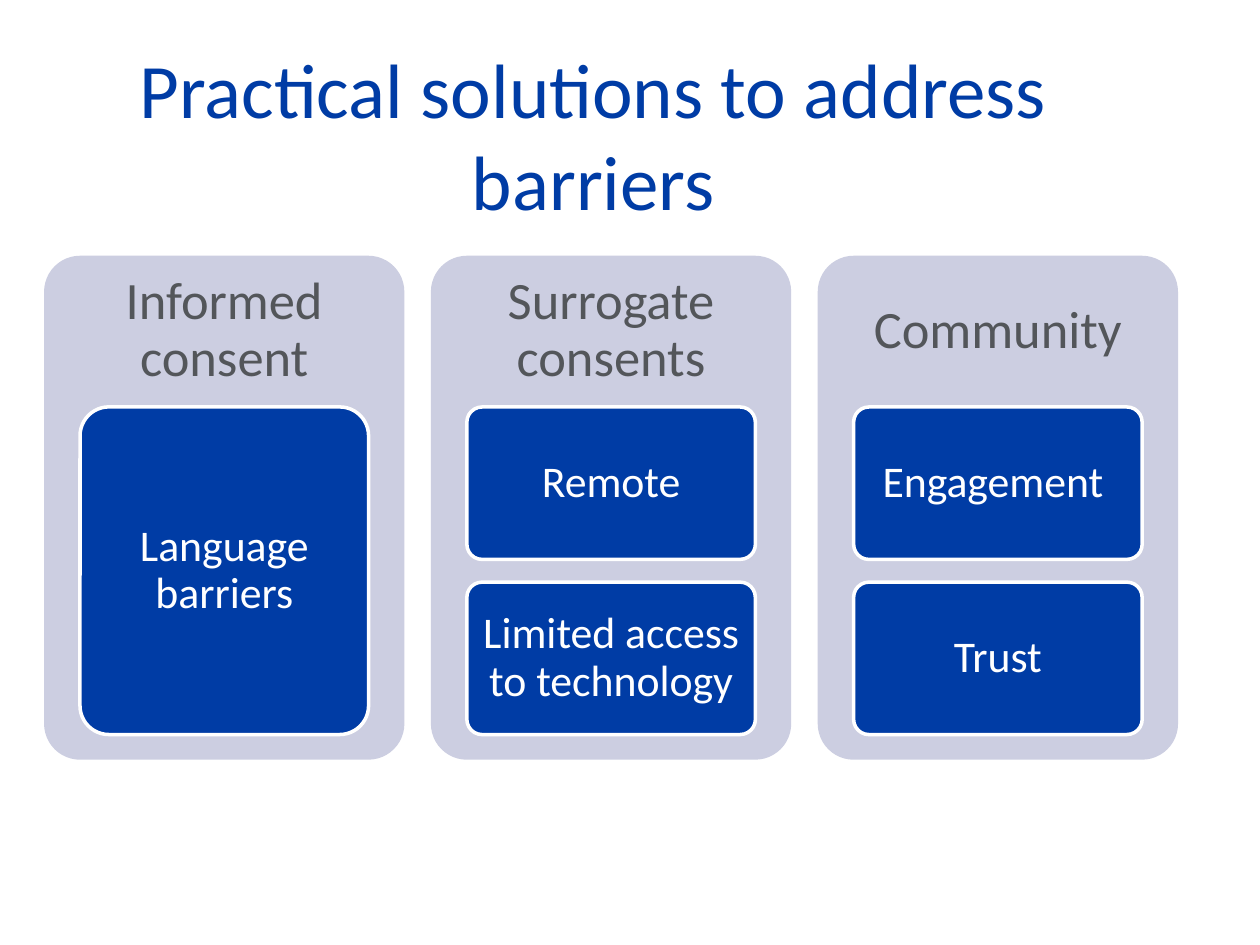
from pptx import Presentation
from pptx.dml.color import RGBColor
from pptx.enum.shapes import MSO_SHAPE
from pptx.enum.text import MSO_ANCHOR, PP_ALIGN
from pptx.util import Inches, Pt

TITLE = "Practical solutions to address barriers"
COLUMNS = [
    ("Informed consent", ["Language barriers"]),
    ("Surrogate consents", ["Remote", "Limited access to technology"]),
    ("Community", ["Engagement ", "Trust"]),
]
COLORS = {"blue": "003CA5", "panel": "CCCEE1", "gray": "53565A", "white": "FFFFFF"}

PANEL_LEFT, PANEL_TOP, PANEL_WIDTH, PANEL_HEIGHT = 0.35, 2.03, 2.86, 4
PANEL_STEP = 3.07
HEADING_HEIGHT = 1.2
CARD_WIDTH, CARDS_HEIGHT, CARD_GAP = 2.29, 2.6, 0.18


def color(name):
    return RGBColor.from_string(COLORS[name])


def write(shape, text, size, color_name, margins, anchor=MSO_ANCHOR.MIDDLE, spacing=0.9):
    frame = shape.text_frame
    horizontal, vertical = (Inches(margin) for margin in margins)
    frame_format = {
        "word_wrap": True, "vertical_anchor": anchor,
        "margin_left": horizontal, "margin_right": horizontal,
        "margin_top": vertical, "margin_bottom": vertical,
    }
    for name, value in frame_format.items():
        setattr(frame, name, value)
    paragraph = frame.paragraphs[0]
    paragraph.text = text
    paragraph.alignment = PP_ALIGN.CENTER
    paragraph.line_spacing = spacing
    for name, value in {"name": "Calibri", "size": Pt(size)}.items():
        setattr(paragraph.font, name, value)
    paragraph.font.color.rgb = color(color_name)


def add_text(slide, box, *args, **options):
    write(slide.shapes.add_textbox(*map(Inches, box)), *args, **options)


def add_rounded(slide, box, fill, line=None):
    shape = slide.shapes.add_shape(MSO_SHAPE.ROUNDED_RECTANGLE, *map(Inches, box))
    shape.adjustments[0] = 0.1
    shape.shadow.inherit = False
    shape.fill.solid()
    shape.fill.fore_color.rgb = color(fill)
    if line:
        shape.line.color.rgb = color(line)
        shape.line.width = Pt(2)
    else:
        shape.line.fill.background()
    return shape


def add_column(slide, left, heading, cards):
    add_rounded(slide, (left, PANEL_TOP, PANEL_WIDTH, PANEL_HEIGHT), "panel")
    add_text(slide, (left, PANEL_TOP, PANEL_WIDTH, HEADING_HEIGHT),
             heading, 30, "gray", (0.12, 0.12))
    card_left = left + (PANEL_WIDTH - CARD_WIDTH) / 2
    card_height = (CARDS_HEIGHT - CARD_GAP * (len(cards) - 1)) / len(cards)
    for row, text in enumerate(cards):
        top = PANEL_TOP + HEADING_HEIGHT + row * (card_height + CARD_GAP)
        card = add_rounded(slide, (card_left, top, CARD_WIDTH, card_height), "blue", "white")
        write(card, text, 25, "white", (0.07, 0.05))


def main():
    presentation = Presentation()
    presentation.slide_width, presentation.slide_height = Inches(10), Inches(7.5)
    slide = presentation.slides.add_slide(presentation.slide_layouts[6])
    add_text(slide, (0.21, 0.33, 9, 0.87), TITLE, 44, "blue", (0, 0),
             anchor=MSO_ANCHOR.TOP, spacing=1.0)
    for index, (heading, cards) in enumerate(COLUMNS):
        add_column(slide, PANEL_LEFT + index * PANEL_STEP, heading, cards)
    presentation.save("out.pptx")


if __name__ == "__main__":
    main()
